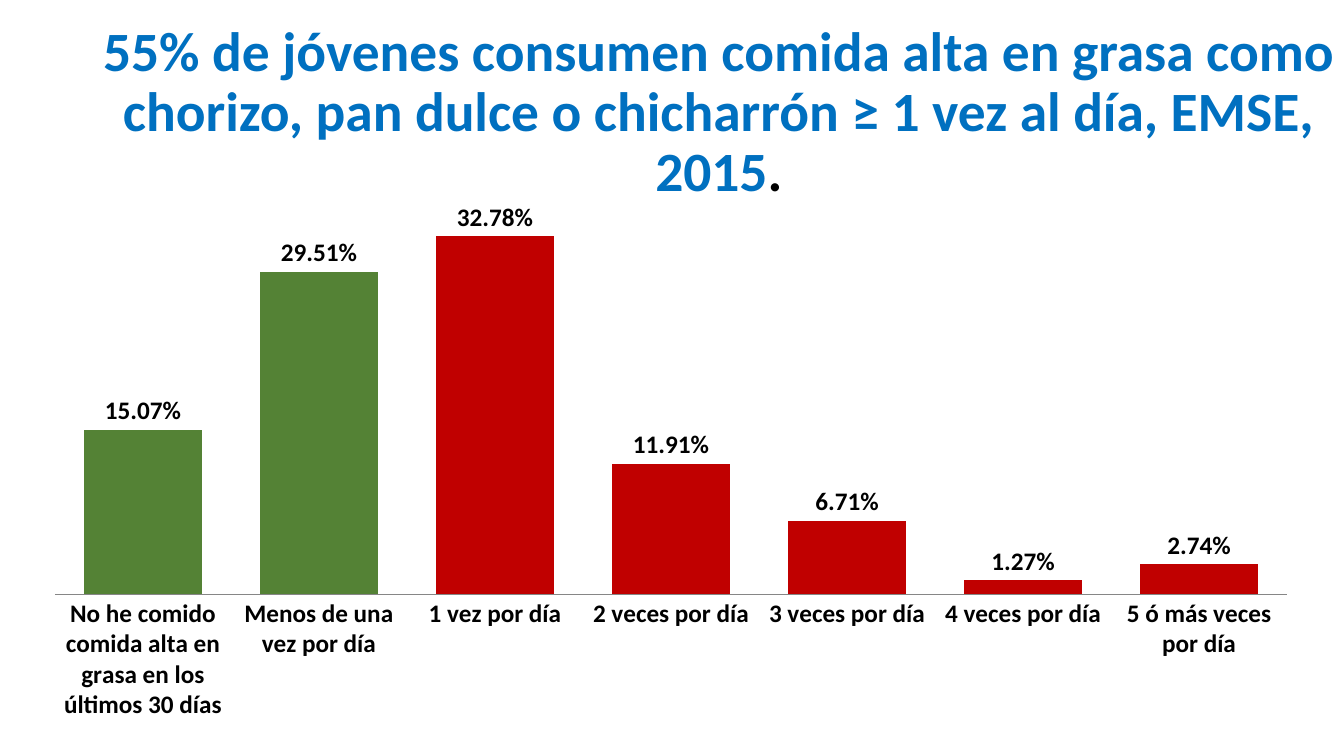
from typing import NamedTuple

from pptx import Presentation
from pptx.chart.data import CategoryChartData
from pptx.dml.color import RGBColor
from pptx.enum.chart import XL_CHART_TYPE as ChartType
from pptx.enum.chart import XL_LABEL_POSITION as LabelPosition
from pptx.enum.chart import XL_TICK_MARK as TickMark
from pptx.enum.text import MSO_ANCHOR as Anchor
from pptx.enum.text import PP_ALIGN as Align
from pptx.util import Inches, Pt

FONT = "Calibri"
BLUE, BLACK, GREY = "0070C0", "000000", "868686"
GREEN, RED = "548235", "C00000"
PERCENT = "0.00%"


class Frequency(NamedTuple):
    label: str
    share: float
    color: str = RED


class Span(NamedTuple):
    text: str
    color: str


FREQUENCIES = [
    Frequency("No he comido comida alta en grasa en los últimos 30 días", 0.1507, GREEN),
    Frequency("Menos de una vez por día", 0.2951, GREEN),
    Frequency("1 vez por día", 0.3278),
    Frequency("2 veces por día", 0.1191),
    Frequency("3 veces por día", 0.0671),
    Frequency("4 veces por día", 0.0127),
    Frequency("5 ó más veces por día", 0.0274),
]
TITLE = [
    Span("55% de jóvenes consumen comida alta en grasa como chorizo, "
         "pan dulce o chicharrón ≥ 1 vez al día, EMSE, 2015", BLUE),
    Span(".", BLACK),
]


def paint(target, color: str) -> None:
    """Give a fill a solid colour."""
    target.solid()
    target.fore_color.rgb = RGBColor.from_string(color)


def set_font(font, size: float, bold: bool = True) -> None:
    font.name, font.size, font.bold = FONT, Pt(size), bold


def add_title(page, spans: list[Span]) -> None:
    box = page.shapes.add_textbox(Inches(0.92), Inches(0.4), Inches(12.42), Inches(1.45))
    frame = box.text_frame
    frame.word_wrap = True
    frame.vertical_anchor = Anchor.MIDDLE
    para = frame.paragraphs[0]
    para.alignment = Align.CENTER
    para.line_spacing = 0.9
    set_font(para.font, 39.6)
    for span in spans:
        run = para.add_run()
        run.text = span.text
        paint(run.font.fill, span.color)


def add_frequency_chart(page, frequencies: list[Frequency]) -> None:
    data = CategoryChartData(number_format=PERCENT)
    data.categories = [item.label for item in frequencies]
    data.add_series("Series 1", [item.share for item in frequencies])
    chart = page.shapes.add_chart(
        ChartType.COLUMN_CLUSTERED,
        Inches(0.29), Inches(2), Inches(12.73), Inches(5.25), data).chart
    chart.has_legend = chart.has_title = False
    set_font(chart.font, 10, bold=False)
    paint(chart.font.fill, BLACK)

    # Axes
    categories, values = chart.category_axis, chart.value_axis
    categories.major_tick_mark = categories.minor_tick_mark = TickMark.NONE
    set_font(categories.tick_labels.font, 18)
    paint(categories.format.line.fill, GREY)
    values.visible = values.has_major_gridlines = False
    values.minimum_scale, values.maximum_scale = 0, 0.35

    # Columns
    plot = chart.plots[0]
    plot.gap_width, plot.overlap = 50, -25
    plot.vary_by_categories = False
    series = plot.series[0]
    series.invert_if_negative = False
    paint(series.format.fill, RED)
    for index, item in enumerate(frequencies):
        if item.color != RED:
            paint(series.points[index].format.fill, item.color)

    # Value labels
    labels = series.data_labels
    labels.show_value = True
    labels.number_format, labels.number_format_is_linked = PERCENT, False
    labels.position = LabelPosition.OUTSIDE_END
    set_font(labels.font, 18)


def main() -> None:
    deck = Presentation()
    deck.slide_width, deck.slide_height = Inches(13.33), Inches(7.5)
    page = deck.slides.add_slide(deck.slide_layouts[6])
    add_title(page, TITLE)
    add_frequency_chart(page, FREQUENCIES)
    deck.save("out.pptx")


if __name__ == "__main__":
    main()
